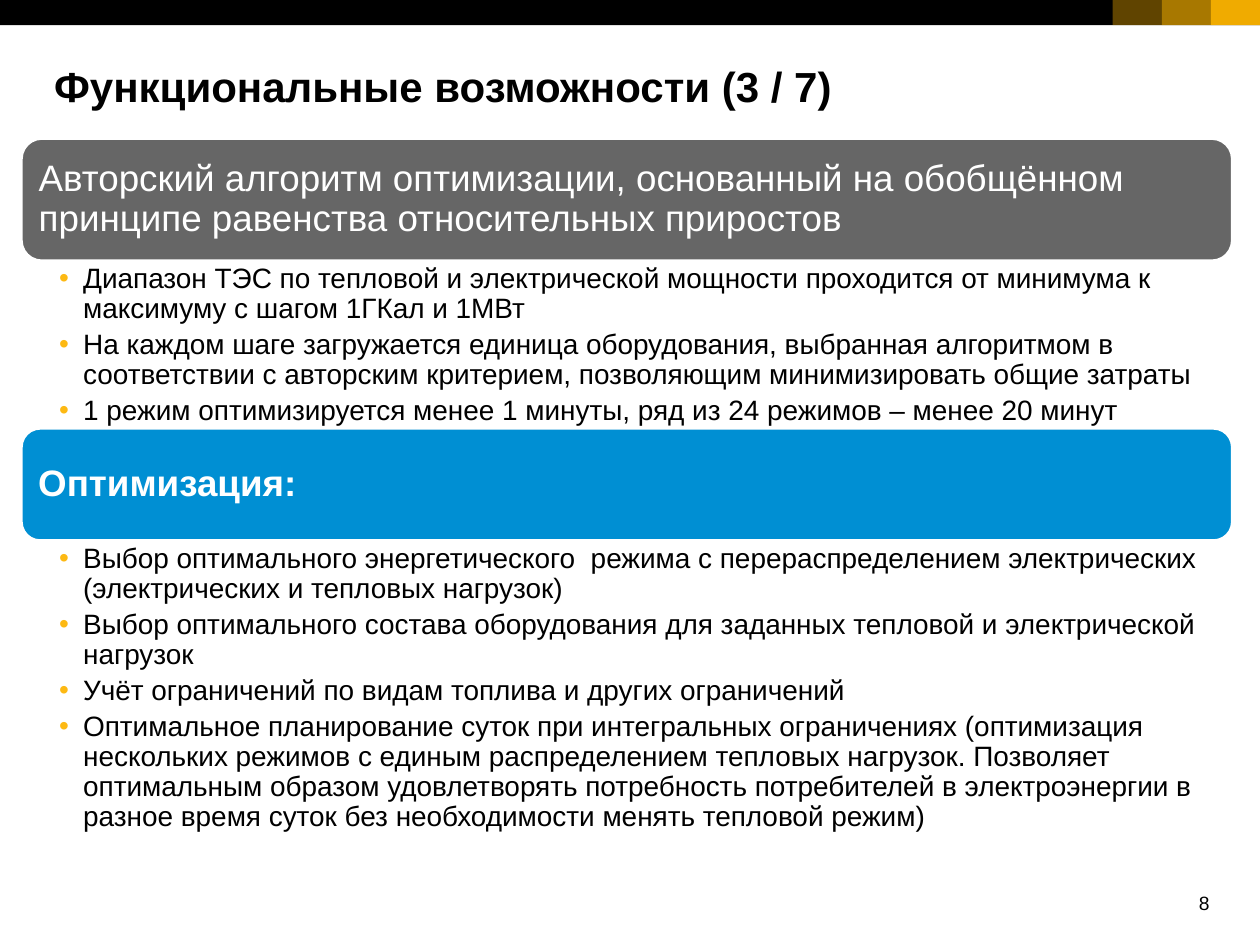
from lxml import etree
from pptx import Presentation
from pptx.dml.color import RGBColor
from pptx.enum.shapes import MSO_SHAPE
from pptx.enum.text import MSO_ANCHOR, PP_ALIGN
from pptx.oxml.ns import qn
from pptx.util import Inches, Pt

# Content
TITLE = "Функциональные возможности (3 / 7)"
PAGE_NUMBER = "8"
SECTIONS = [
    {
        "heading": "Авторский алгоритм оптимизации, основанный на обобщённом принципе равенства относительных приростов",
        "bold": False, "color": "gray", "heading_height": 0.97, "list_height": 1.33,
        "items": [
            "Диапазон ТЭС по тепловой и электрической мощности проходится от минимума к максимуму с шагом 1ГКал и 1МВт",
            "На каждом шаге загружается единица оборудования, выбранная алгоритмом в соответствии с авторским критерием, позволяющим минимизировать общие затраты",
            "1 режим оптимизируется менее 1 минуты, ряд из 24 режимов – менее 20 минут",
        ],
    },
    {
        "heading": "Оптимизация:",
        "bold": True, "color": "blue", "heading_height": 0.89, "list_height": 2.28,
        "items": [
            "Выбор оптимального энергетического  режима с перераспределением электрических (электрических и тепловых нагрузок)",
            "Выбор оптимального состава оборудования для заданных тепловой и электрической нагрузок",
            "Учёт ограничений по видам топлива и других ограничений",
            "Оптимальное планирование суток при интегральных ограничениях (оптимизация нескольких режимов с единым распределением тепловых нагрузок. Позволяет оптимальным образом удовлетворять потребность потребителей в электроэнергии в разное время суток без необходимости менять тепловой режим)",
        ],
    },
]

# Style
COLORS = {"black": "000000", "white": "FFFFFF", "gold": "F0AB00",
          "bullet": "FDB913", "gray": "666666", "blue": "008FD3"}
FONT = "Arial"
BAR_HEIGHT, STEP_WIDTH = 0.2, 0.39
STEP_OPACITIES = [100, 70, 40]  # from the right edge inwards
SLIDE_WIDTH, SLIDE_HEIGHT = 10, 7.5
SECTION_LEFT, SECTION_TOP, SECTION_WIDTH = 0.17, 1.1, 9.61
BULLET_INDENT = 0.19

presentation = Presentation()
presentation.slide_width = Inches(SLIDE_WIDTH)
presentation.slide_height = Inches(SLIDE_HEIGHT)
slide = presentation.slides.add_slide(presentation.slide_layouts[6])


def rgb(name):
    return RGBColor.from_string(COLORS[name])


def add_block(kind, left, top, width, height, color, opacity=100):
    shape = slide.shapes.add_shape(kind, Inches(left), Inches(top), Inches(width), Inches(height))
    shape.shadow.inherit = False
    shape.fill.solid()
    shape.fill.fore_color.rgb = rgb(color)
    shape.line.fill.background()
    if opacity < 100:
        fill_color = shape.fill._xPr.find(qn("a:solidFill"))[0]
        etree.SubElement(fill_color, qn("a:alpha"), val=str(opacity * 1000))
    return shape


def set_frame(shape, insets, anchor=MSO_ANCHOR.TOP):
    frame = shape.text_frame
    frame.word_wrap = True
    frame.vertical_anchor = anchor
    (frame.margin_left, frame.margin_top,
     frame.margin_right, frame.margin_bottom) = [Inches(inset) for inset in insets]
    return frame


def add_text_box(left, top, width, height, insets=(0, 0, 0, 0)):
    box = slide.shapes.add_textbox(Inches(left), Inches(top), Inches(width), Inches(height))
    return set_frame(box, insets)


def add_run(paragraph, text, size, color="black", bold=False, align=PP_ALIGN.LEFT):
    paragraph.alignment = align
    run = paragraph.add_run()
    run.text = text
    run.font.name = FONT
    run.font.size = Pt(size)
    run.font.bold = bold
    run.font.color.rgb = rgb(color)


def add_bullet(paragraph):
    properties = paragraph._p.get_or_add_pPr()
    properties.set("marL", str(Inches(BULLET_INDENT)))
    properties.set("indent", str(-Inches(BULLET_INDENT)))
    bullet_color = etree.SubElement(properties, qn("a:buClr"))
    etree.SubElement(bullet_color, qn("a:srgbClr"), val=COLORS["bullet"])
    etree.SubElement(properties, qn("a:buFont"), typeface=FONT)
    etree.SubElement(properties, qn("a:buChar"), char="•")


# Top bar with gold steps
add_block(MSO_SHAPE.RECTANGLE, 0, 0, SLIDE_WIDTH, BAR_HEIGHT, "black")
for index, opacity in enumerate(STEP_OPACITIES, start=1):
    add_block(MSO_SHAPE.RECTANGLE, SLIDE_WIDTH - index * STEP_WIDTH, 0,
              STEP_WIDTH, BAR_HEIGHT, "gold", opacity)

# Title and page number
add_run(add_text_box(0.43, 0.48, 9.5, 0.5).paragraphs[0], TITLE, 24, bold=True)
add_run(add_text_box(9.32, 7.07, 0.28, 0.19).paragraphs[0], PAGE_NUMBER, 11, align=PP_ALIGN.RIGHT)

# Sections: heading block followed by its list
top = SECTION_TOP
for section in SECTIONS:
    heading = add_block(MSO_SHAPE.ROUNDED_RECTANGLE, SECTION_LEFT, top, SECTION_WIDTH,
                        section["heading_height"], section["color"])
    heading.line.color.rgb = rgb("white")
    heading.line.width = Pt(1.5)
    paragraph = set_frame(heading, (0.09,) * 4, MSO_ANCHOR.MIDDLE).paragraphs[0]
    paragraph.line_spacing = 0.9
    add_run(paragraph, section["heading"], 21, "white", section["bold"])
    top += section["heading_height"]

    frame = add_text_box(SECTION_LEFT, top, SECTION_WIDTH, section["list_height"],
                         (0.3, 0.03, 0.16, 0.03))
    for index, item in enumerate(section["items"]):
        paragraph = frame.add_paragraph() if index else frame.paragraphs[0]
        add_bullet(paragraph)
        paragraph.line_spacing = 0.9
        paragraph.space_after = Pt(3.2)
        add_run(paragraph, item, 16)
    top += section["list_height"]

presentation.save("out.pptx")
